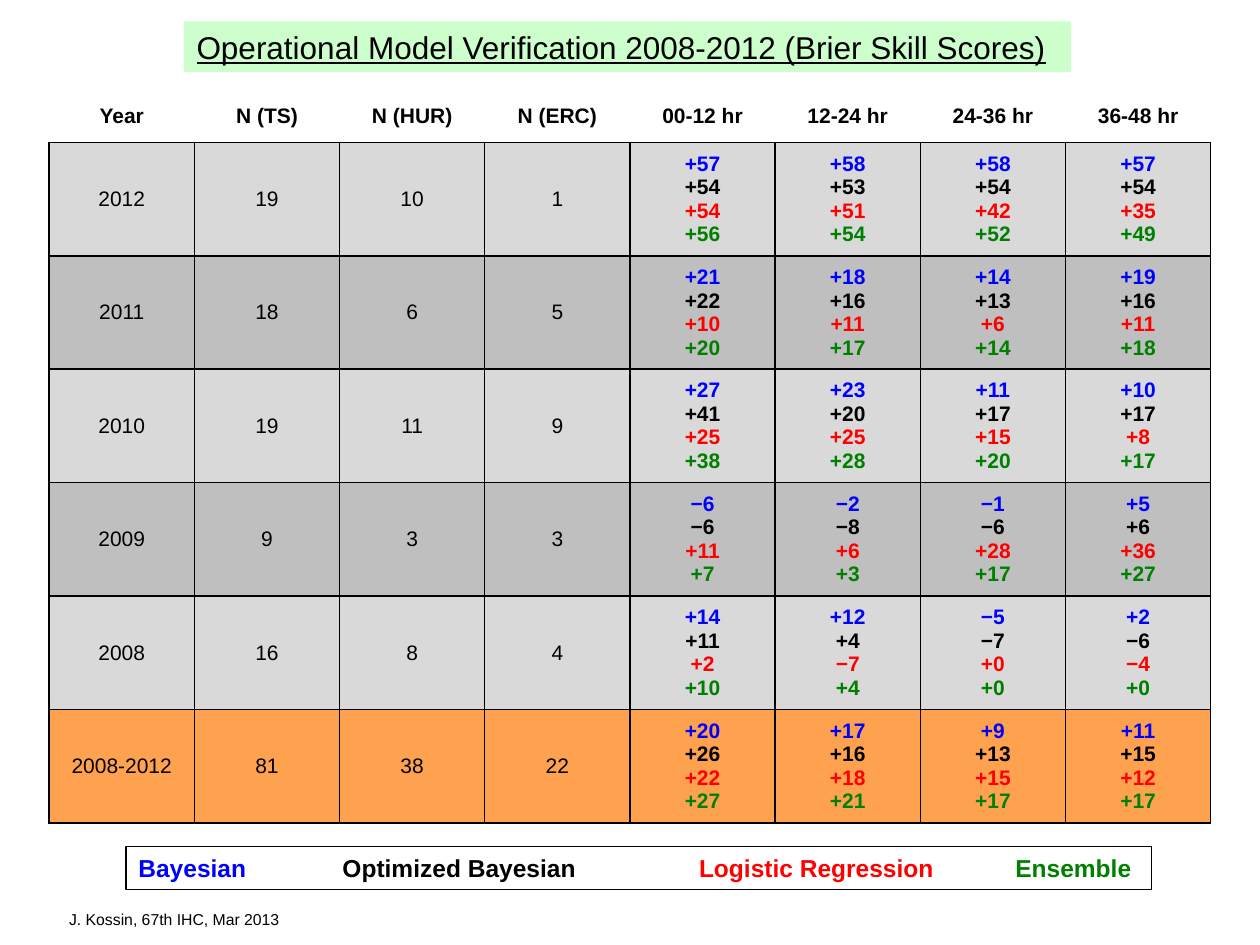
from dataclasses import dataclass

from lxml import etree
from pptx import Presentation
from pptx.dml.color import RGBColor
from pptx.enum.shapes import MSO_SHAPE
from pptx.enum.text import MSO_ANCHOR, MSO_AUTO_SIZE, PP_ALIGN
from pptx.oxml.ns import qn
from pptx.util import Inches, Pt

RECTANGLE = MSO_SHAPE.RECTANGLE
MIDDLE = MSO_ANCHOR.MIDDLE
NO_AUTOFIT = MSO_AUTO_SIZE.NONE
LEFT, CENTER = PP_ALIGN.LEFT, PP_ALIGN.CENTER


@dataclass(frozen=True)
class Theme:
    font: str = "Arial"
    black: str = "000000"
    white: str = "FFFFFF"
    title_fill: str = "CCFFCC"
    bands: tuple = ("D9D9D9", "BFBFBF")
    total_fill: str = "FFA250"
    models: tuple = ("0000FF", "000000", "FF0000", "008000")
    title_size: int = 18
    legend_size: int = 14
    table_size: int = 12
    footer_size: int = 9


theme = Theme()


def add_span(para, text, size, color=theme.black, **formats):
    """Add one formatted run to a paragraph."""
    span = para.add_run()
    span.text = text
    span.font.color.rgb = RGBColor.from_string(color)
    for name, value in {"name": theme.font, "size": Pt(size), **formats}.items():
        setattr(span.font, name, value)


def set_borders(cell, visible_sides):
    """Draw the named sides of a cell in black and clear the others."""
    properties = cell._tc.get_or_add_tcPr()
    for side in "LRTB":
        line = etree.SubElement(properties, qn(f"a:ln{side}"), w=str(Pt(1)))
        if side in visible_sides:
            fill = etree.SubElement(line, qn("a:solidFill"))
            etree.SubElement(fill, qn("a:srgbClr"), val=theme.black)
        else:
            etree.SubElement(line, qn("a:noFill"))


headers = ["Year", "N (TS)", "N (HUR)", "N (ERC)",
           "00-12 hr", "12-24 hr", "24-36 hr", "36-48 hr"]
# Each score cell lists the models in legend order
seasons = [
    ["2012", "19", "10", "1",
     "+57 +54 +54 +56", "+58 +53 +51 +54", "+58 +54 +42 +52", "+57 +54 +35 +49"],
    ["2011", "18", "6", "5",
     "+21 +22 +10 +20", "+18 +16 +11 +17", "+14 +13 +6 +14", "+19 +16 +11 +18"],
    ["2010", "19", "11", "9",
     "+27 +41 +25 +38", "+23 +20 +25 +28", "+11 +17 +15 +20", "+10 +17 +8 +17"],
    ["2009", "9", "3", "3",
     "−6 −6 +11 +7", "−2 −8 +6 +3", "−1 −6 +28 +17", "+5 +6 +36 +27"],
    ["2008", "16", "8", "4",
     "+14 +11 +2 +10", "+12 +4 −7 +4", "−5 −7 +0 +0", "+2 −6 −4 +0"],
    ["2008-2012", "81", "38", "22",
     "+20 +26 +22 +27", "+17 +16 +18 +21", "+9 +13 +15 +17", "+11 +15 +12 +17"],
]
first_score_column = 4

deck = Presentation()
deck.slide_width, deck.slide_height = Inches(10), Inches(7.5)
page = deck.slides.add_slide(deck.slide_layouts[5])

# Title
title = page.shapes.title
title.left, title.top = Inches(1.46), Inches(0.17)
title.width, title.height = Inches(7.04), Inches(0.4)
title.fill.solid()
title.fill.fore_color.rgb = RGBColor.from_string(theme.title_fill)
title.text_frame.auto_size = NO_AUTOFIT
title.text_frame.vertical_anchor = MIDDLE
para = title.text_frame.paragraphs[0]
para.alignment = LEFT
add_span(para, "Operational Model Verification 2008-2012 (Brier Skill Scores)",
         theme.title_size, underline=True)

# Score table
table = page.shapes.add_table(
    len(seasons) + 1, len(headers),
    Inches(0.39), Inches(0.72), Inches(9.22), Inches(5.81)).table
table.horz_banding = False
for row_index, row in enumerate([headers] + seasons):
    is_header = row_index == 0
    table.rows[row_index].height = Inches(0.41 if is_header else 0.9)
    if is_header:
        fill_color = theme.white
    elif row_index == len(seasons):
        fill_color = theme.total_fill
    else:
        fill_color = theme.bands[(row_index - 1) % 2]
    for column_index, text in enumerate(row):
        cell = table.cell(row_index, column_index)
        set_borders(cell, "B" if is_header else "LRTB")
        cell.fill.solid()
        cell.fill.fore_color.rgb = RGBColor.from_string(fill_color)
        cell.vertical_anchor = MIDDLE
        is_score = not is_header and column_index >= first_score_column
        lines = text.split() if is_score else [text]
        for line_index, (line, color) in enumerate(zip(lines, theme.models)):
            frame = cell.text_frame
            para = frame.add_paragraph() if line_index else frame.paragraphs[0]
            para.alignment = CENTER
            add_span(para, line, theme.table_size,
                     color if is_score else theme.black,
                     bold=is_header or is_score)

# Model legend, spaced by tab stops
legend = page.shapes.add_shape(
    RECTANGLE, Inches(1), Inches(6.72), Inches(8.14), Inches(0.34))
legend.shadow.inherit = False
legend.fill.background()
legend.line.color.rgb = RGBColor.from_string(theme.black)
legend.line.width = Pt(0.75)
legend.text_frame.word_wrap = True
legend.text_frame.vertical_anchor = MIDDLE
para = legend.text_frame.paragraphs[0]
para.alignment = LEFT
tabs = etree.SubElement(para._p.get_or_add_pPr(), qn("a:tabLst"))
for position in (1.62, 4.45, 6.96):
    etree.SubElement(tabs, qn("a:tab"), pos=str(Inches(position)), algn="l")
names = ["Bayesian", "Optimized Bayesian", "Logistic Regression", "Ensemble"]
for name, color in zip(names, theme.models):
    text = name if name == names[-1] else name + "\t"
    add_span(para, text, theme.legend_size, color, bold=True)

# Footer
footer = page.shapes.add_textbox(
    Inches(0.45), Inches(7.17), Inches(1.89), Inches(0.25))
footer.text_frame.word_wrap = False
add_span(footer.text_frame.paragraphs[0], "J. Kossin, 67th IHC, Mar 2013",
         theme.footer_size)

deck.save("out.pptx")
